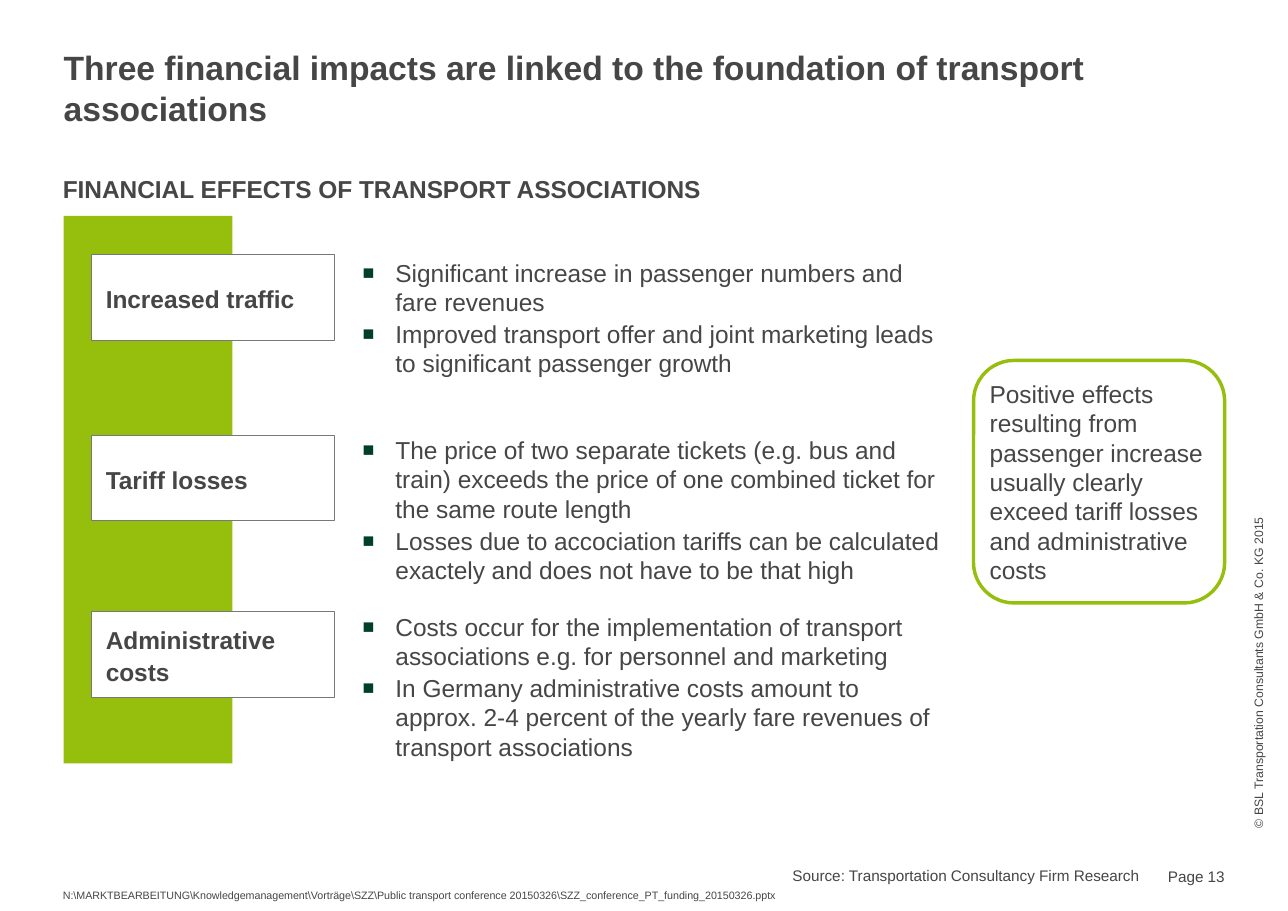
from dataclasses import dataclass

from lxml import etree
from pptx import Presentation
from pptx import util as u
from pptx.dml.color import RGBColor
from pptx.enum import shapes, text
from pptx.oxml import ns

TEXT, GREEN, EDGE, DARK, WHITE = "464646", "96BE0D", "77787B", "003F2D", "FFFFFF"
FONT = "Arial"
TOP, MID, LOW = text.MSO_ANCHOR.TOP, text.MSO_ANCHOR.MIDDLE, text.MSO_ANCHOR.BOTTOM
LEFT, RIGHT = text.PP_ALIGN.LEFT, text.PP_ALIGN.RIGHT


@dataclass
class Box:
    x: float
    y: float
    w: float
    h: float

    def place(self) -> tuple:
        return tuple(u.Cm(n) for n in (self.x, self.y, self.w, self.h))


@dataclass
class Label:
    box: Box
    words: str
    size: int
    bold: bool = False
    align: int = LEFT
    anchor: int = TOP
    lines: float = 1.0
    turn: int = 0


@dataclass
class Effect:
    name: str
    y: float
    text_y: float
    points: tuple


def color(code: str) -> RGBColor:
    return RGBColor.from_string(code)


def apply(thing, values: dict) -> None:
    for key, value in values.items():
        setattr(thing, key, value)


def bullet(par) -> None:
    props = par._p.get_or_add_pPr()
    props.set("marL", str(u.Cm(0.79)))
    props.set("indent", str(u.Cm(-0.76)))
    tint = etree.SubElement(props, ns.qn("a:buClr"))
    etree.SubElement(tint, ns.qn("a:srgbClr"), val=DARK)
    for tag, key, value in (("buSzPct", "val", "80000"),
                            ("buFont", "typeface", FONT),
                            ("buChar", "char", "■")):
        etree.SubElement(props, ns.qn(f"a:{tag}")).set(key, value)


def write(shape, words: tuple, size: int, bold: bool = False, align: int = LEFT,
          anchor: int = TOP, lines: float = 1.0, inset: tuple = (0, 0, 0, 0),
          marks: bool = False) -> None:
    frame = shape.text_frame
    sides = ("margin_left", "margin_top", "margin_right", "margin_bottom")
    apply(frame, {"word_wrap": True, "vertical_anchor": anchor,
                  **{side: u.Cm(n) for side, n in zip(sides, inset)}})
    for i, line in enumerate(words):
        par = frame.add_paragraph() if i else frame.paragraphs[0]
        if marks:
            bullet(par)
        apply(par, {"alignment": align, "line_spacing": lines})
        if i:
            par.space_before = u.Pt(1.6)
        run = par.add_run()
        run.text = line
        apply(run.font, {"name": FONT, "size": u.Pt(size), "bold": bold})
        run.font.color.rgb = color(TEXT)


def panel(slide, kind: int, box: Box, fill: str = "", edge: str = "",
          width: float = 0):
    shape = slide.shapes.add_shape(kind, *box.place())
    shape.shadow.inherit = False
    if fill:
        shape.fill.solid()
        shape.fill.fore_color.rgb = color(fill)
    else:
        shape.fill.background()
    if edge:
        shape.line.color.rgb = color(edge)
        shape.line.width = u.Pt(width)
    else:
        shape.line.fill.background()
    return shape


def label(slide, item: Label) -> None:
    shape = slide.shapes.add_textbox(*item.box.place())
    shape.rotation = item.turn
    write(shape, (item.words,), item.size, item.bold, item.align, item.anchor,
          item.lines)


def effect(slide, item: Effect) -> None:
    card = panel(slide, shapes.MSO_SHAPE.RECTANGLE, Box(2.11, item.y, 5.61, 1.98),
                 WHITE, EDGE, 0.75)
    write(card, (item.name,), 16, bold=True, anchor=MID, lines=1.1,
          inset=(0.33, 0.13, 0, 0.13))
    notes = slide.shapes.add_textbox(*Box(8.33, item.text_y, 13.51, 2.46).place())
    write(notes, item.points, 16, inset=(0, 0, 0, 0.13), marks=True)


LABELS = (
    Label(Box(1.47, 1.09, 26.77, 2.59),
          "Three financial impacts are linked to the foundation of transport associations",
          22, bold=True),
    Label(Box(1.45, 3.89, 26.8, 0.79), "FINANCIAL EFFECTS OF TRANSPORT ASSOCIATIONS",
          16, bold=True, anchor=LOW),
    Label(Box(11.25, 19.51, 15.01, 0.89),
          "Source: Transportation Consultancy Firm Research", 10, align=RIGHT, anchor=LOW),
    Label(Box(26.06, 19.94, 2.18, 0.53), "Page 13", 10, align=RIGHT, lines=1.1),
    Label(Box(1.45, 20.45, 17.07, 0.35),
          r"N:\MARKTBEARBEITUNG\Knowledgemanagement\Vorträge\SZZ"
          r"\Public transport conference 20150326\SZZ_conference_PT_funding_20150326.pptx",
          7, lines=1.1),
    Label(Box(25.37, 15.27, 7.26, 0.38),
          "© BSL Transportation Consultants GmbH & Co. KG 2015", 8, lines=1.1, turn=270),
)

EFFECTS = (
    Effect("Increased traffic", 5.87, 5.94, (
        "Significant increase in passenger numbers and fare revenues",
        "Improved transport offer and joint marketing leads to significant passenger growth")),
    Effect("Tariff losses", 10.03, 10.03, (
        "The price of two separate tickets (e.g. bus and train) exceeds the price of "
        "one combined ticket for the same route length",
        "Losses due to accociation tariffs can be calculated exactely and does not "
        "have to be that high")),
    Effect("Administrative costs", 14.1, 14.1, (
        "Costs occur for the implementation of transport associations e.g. for "
        "personnel and marketing",
        "In Germany administrative costs amount to approx. 2-4 percent of the yearly "
        "fare revenues of transport associations")),
)


def main() -> None:
    deck = Presentation()
    apply(deck, {"slide_width": u.Cm(29.7), "slide_height": u.Cm(21)})
    slide = deck.slides.add_slide(deck.slide_layouts[6])

    # Title, heading and footer
    for item in LABELS:
        label(slide, item)

    # Green band with the three effects
    panel(slide, shapes.MSO_SHAPE.RECTANGLE, Box(1.47, 4.98, 3.89, 12.62), GREEN)
    for item in EFFECTS:
        effect(slide, item)

    # Conclusion
    result = panel(slide, shapes.MSO_SHAPE.ROUNDED_RECTANGLE,
                   Box(22.45, 8.31, 5.79, 5.59), edge=GREEN, width=2.25)
    write(result, ("Positive effects resulting from passenger increase usually clearly "
                   "exceed tariff losses and administrative costs",),
          16, anchor=MID, inset=(0.1, 0.1, 0, 0.1))

    deck.save("out.pptx")


if __name__ == "__main__":
    main()
